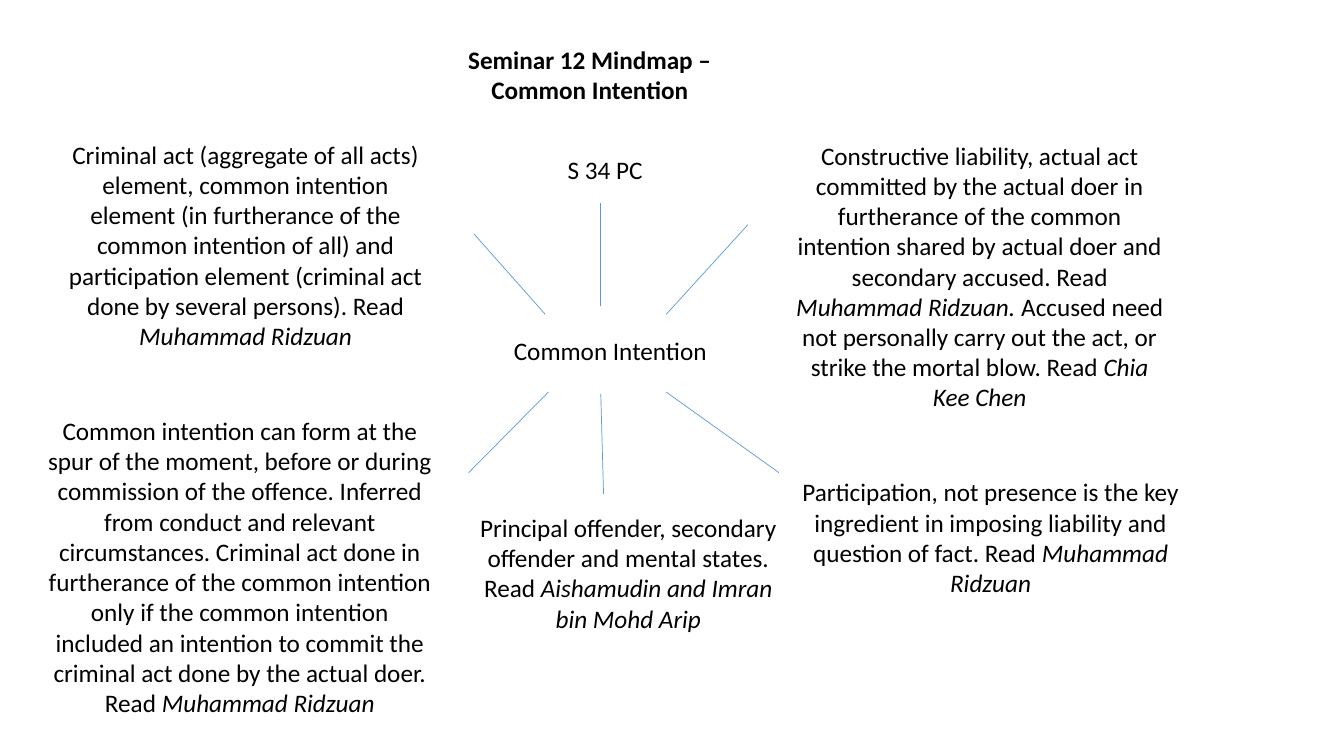
"""Build the Seminar 12 mind map on common intention."""
from dataclasses import dataclass

from lxml.etree import SubElement
from pptx import Presentation
from pptx.dml.color import RGBColor
from pptx.enum.shapes import MSO_CONNECTOR as CONN
from pptx.enum.text import MSO_AUTO_SIZE as FIT, PP_ALIGN as ALIGN
from pptx.oxml.ns import qn
from pptx.util import Cm, Pt

FONT = {"name": "Calibri", "size": Pt(18)}
CASE = "Muhammad Ridzuan"


@dataclass
class Note:
    """Paragraphs of alternating plain and italic runs in a box, in cm."""
    left: float
    top: float
    width: float
    height: float
    paragraphs: list[list[str]]
    bold: bool = False


@dataclass
class Branch:
    """A straight line between two points, in cm."""
    x1: float
    y1: float
    x2: float
    y2: float


NOTES = [
    Note(11.15, 8.33, 8.46, 1.02, [["Common Intention"]]),
    Note(11.02, 3.76, 8.46, 1.02, [["S 34 PC"]]),
    Note(10.16, 0.99, 9.55, 1.8,
         [["Seminar 12 Mindmap – "], ["Common Intention "]], bold=True),
    Note(19.71, 3.4, 9.96, 7.19, [[
        "Constructive liability, actual act committed by the actual doer in "
        "furtherance of the common intention shared by actual doer and "
        "secondary accused. Read ", CASE + ". ",
        "Accused need not personally carry out the act, or strike the mortal "
        "blow. Read ", "Chia Kee Chen"]]),
    Note(0.94, 10.34, 10.21, 8.71, [[
        "Common intention can form at the spur of the moment, before or during "
        "commission of the offence. Inferred from conduct and relevant "
        "circumstances. Criminal act done in furtherance of the common "
        "intention only if the common intention included an intention to "
        "commit the criminal act done by the actual doer. Read ", CASE]]),
    Note(1.35, 3.38, 9.68, 5.64, [[
        "Criminal act (aggregate of all acts) element, common intention "
        "element (in furtherance of the common intention of all) and "
        "participation element (criminal act done by several persons). Read ",
        CASE]]),
    Note(19.86, 11.89, 10.21, 4.11, [[
        "Participation, not presence is the key ingredient in imposing "
        "liability and question of fact. Read ", CASE]]),
    Note(11.81, 12.78, 8.05, 4.11, [[
        "Principal offender, secondary offender and mental states. Read ",
        "Aishamudin and Imran bin Mohd Arip"]]),
]

BRANCHES = [
    Branch(13.74, 7.92, 11.94, 5.89),
    Branch(15.14, 7.72, 15.14, 5.11),
    Branch(16.79, 7.92, 18.85, 5.66),
    Branch(13.82, 9.88, 11.81, 11.91),
    Branch(15.14, 9.93, 15.21, 12.45),
    Branch(16.79, 9.88, 19.63, 11.91),
]


def color(value: str) -> RGBColor:
    """Turn a hex string into a colour."""
    return RGBColor.from_string(value)


def add_note(s, note: Note) -> None:
    """Draw one centred text box."""
    box = map(Cm, (note.left, note.top, note.width, note.height))
    tf = s.shapes.add_textbox(*box).text_frame
    tf.word_wrap = True
    tf.auto_size = FIT.SHAPE_TO_FIT_TEXT
    for i, runs in enumerate(note.paragraphs):
        p = tf.add_paragraph() if i else tf.paragraphs[0]
        p.alignment = ALIGN.CENTER
        for j, text in enumerate(runs):
            r = p.add_run()
            r.text = text
            style = FONT | {"bold": note.bold, "italic": j % 2 == 1}
            for key, value in style.items():
                setattr(r.font, key, value)
            r.font.color.rgb = color("000000")


def add_branch(s, branch: Branch) -> None:
    """Draw one thin line without a shadow."""
    ends = map(Cm, (branch.x1, branch.y1, branch.x2, branch.y2))
    sp = s.shapes.add_connector(CONN.STRAIGHT, *ends)
    sp.line.color.rgb = color("5B9BD5")
    sp.line.width = Pt(0.5)
    SubElement(sp._element.spPr, qn("a:effectLst"))


def main() -> None:
    """Create and save the slide."""
    prs = Presentation()
    prs.slide_width, prs.slide_height = Cm(33.87), Cm(19.05)
    s = prs.slides.add_slide(prs.slide_layouts[6])
    for branch in BRANCHES:
        add_branch(s, branch)
    for note in NOTES:
        add_note(s, note)
    prs.save("out.pptx")


if __name__ == "__main__":
    main()
